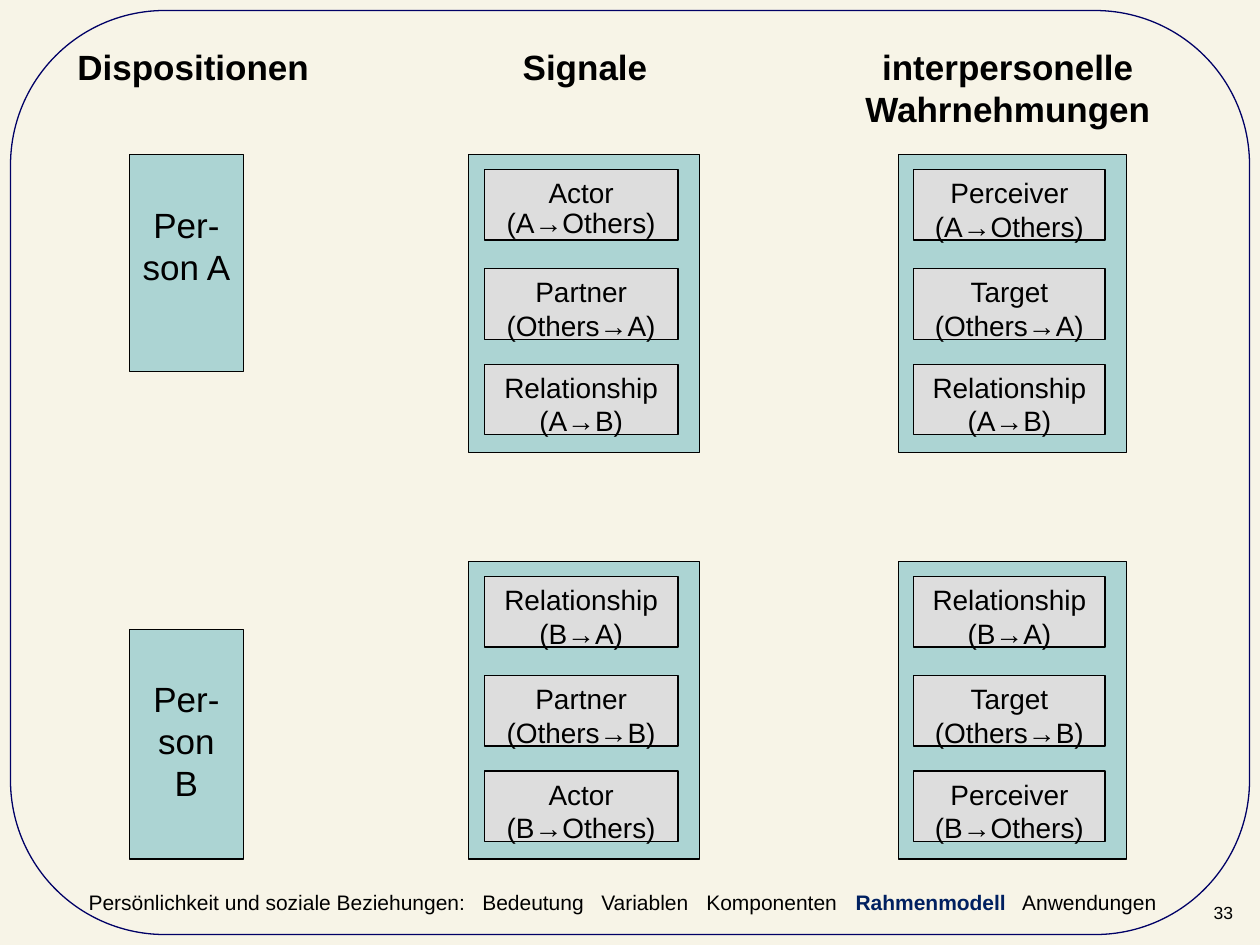
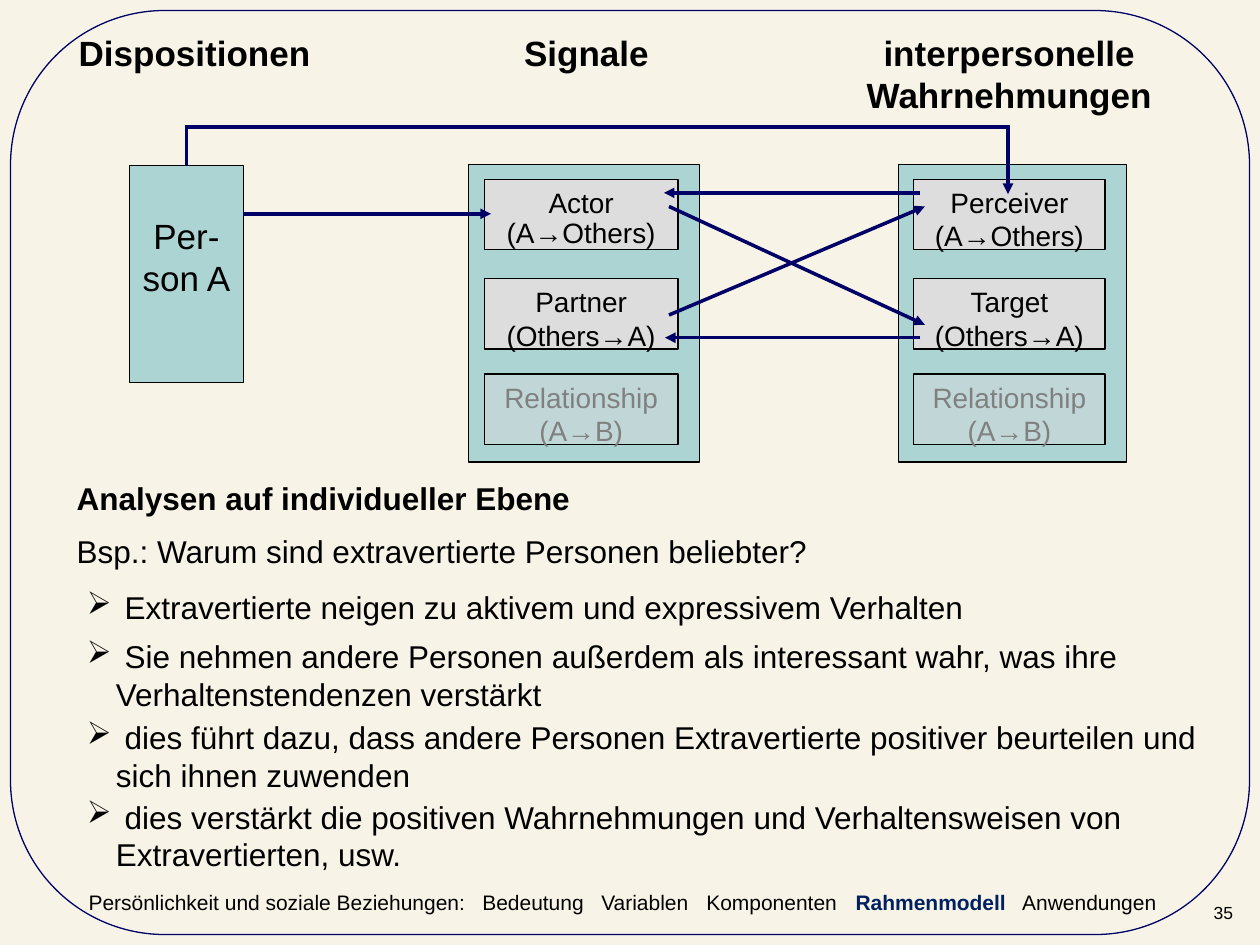
from lxml.etree import SubElement
from pptx import Presentation
from pptx.dml.color import RGBColor
from pptx.enum.shapes import MSO_CONNECTOR as Link, MSO_SHAPE as Preset
from pptx.enum.text import MSO_ANCHOR as Anchor, MSO_AUTO_SIZE as AutoSize, PP_ALIGN as Align
from pptx.oxml.ns import qn
from pptx.util import Pt

# Shared look
FONT = "Arial"
PAPER, TEAL, GREY = "F7F4E7", "ACD4D3", "DDDDDD"
BLACK, NAVY, ACCENT, FADED = "000000", "000066", "002060", "808080"

# Shared grid, in points
PERSON_LEFT, PERSON_WIDTH = 74, 65
SIGNALS = (267.9, 131.8)
PERCEPTIONS = (513.3, 130.4)
PANEL_HEIGHT = 170
ENTRY_INDENT, ENTRY_HEIGHT = 8.8, 40.4
ENTRY_OFFSETS = (8.4, 65.1, 119.7)
HEADINGS = (
    ("Dispositionen", 0, 147.6, 31),
    ("Signale", 221, 153.4, 31),
    ("interpersonelle Wahrnehmungen", 448.6, 181.4, 55.4),
)
FOOTER_TABS = (225, 293, 353, 438.3, 533.5)

# Panel entries: text and special format
SIGNALS_OF_A = [
    ("Actor\n(A→Others)", {"last_spacing": 0.9}),
    ("Partner\n(Others→A)", {}),
]
PERCEPTIONS_OF_A = [
    ("Perceiver (A→Others)", {}),
    ("Target\n(Others→A)", {}),
]
SIGNALS_OF_B = [
    ("Relationship (B→A)", {}),
    ("Partner\n(Others→B)", {}),
    ("Actor\n(B→Others)", {}),
]
PERCEPTIONS_OF_B = [
    ("Relationship (B→A)", {}),
    ("Target\n(Others→B)", {}),
    ("Perceiver (B→Others)", {}),
]
RELATION_A_B = "Relationship (A→B)"

CONCLUSIONS = (
    (332.6, "Extravertierte neigen zu aktivem und expressivem Verhalten"),
    (360.7, "Sie nehmen andere Personen außerdem als interessant wahr, "
            "was ihre Verhaltenstendenzen verstärkt"),
    (406.8, "dies führt dazu, dass andere Personen Extravertierte positiver "
            "beurteilen und sich ihnen zuwenden"),
    (452.2, "dies verstärkt die positiven Wahrnehmungen und Verhaltensweisen "
            "von Extravertierten, usw."),
)


def rgb(color):
    return RGBColor.from_string(color)


# Text
def add_span(para, text, size=18, color=BLACK, bold=False):
    span = para.add_run()
    span.text = text
    span.font.name = FONT
    span.font.size = Pt(size)
    span.font.bold = bold
    span.font.color.rgb = rgb(color)


def write(shape, text, align=Align.LEFT, gap=0, last_spacing=None, **style):
    """Add one paragraph per line of text and return the last one."""
    frame = shape.text_frame
    for line in text.split("\n"):
        if frame.text:
            para = frame.add_paragraph()
            para.space_before = Pt(gap)
        else:
            para = frame.paragraphs[0]
        para.alignment = align
        add_span(para, line, **style)
    if last_spacing:
        para.line_spacing = last_spacing
    return para


def set_insets(frame, side, top, bottom):
    frame.margin_left = frame.margin_right = Pt(side)
    frame.margin_top, frame.margin_bottom = Pt(top), Pt(bottom)


def add_box(page, left, top, width, height, tight=False):
    box = page.shapes.add_textbox(Pt(left), Pt(top), Pt(width), Pt(height))
    box.text_frame.word_wrap = True
    box.text_frame.auto_size = AutoSize.SHAPE_TO_FIT_TEXT
    if tight:
        set_insets(box.text_frame, 0.9, 0.9, 0.9)
    return box


def add_bullet(para, hang):
    props = para._p.get_or_add_pPr()
    props.set("marL", str(Pt(hang)))
    props.set("indent", str(-Pt(hang)))
    SubElement(props, qn("a:buChar"), char="➢")


def add_tabs(para, stops):
    tabs = SubElement(para._p.get_or_add_pPr(), qn("a:tabLst"))
    for stop in stops:
        SubElement(tabs, qn("a:tab"), pos=str(Pt(stop)), algn="l")


# Shapes and lines
def add_block(page, left, top, width, height, fill=None, line=BLACK,
              preset=Preset.RECTANGLE, alpha=None):
    block = page.shapes.add_shape(preset, Pt(left), Pt(top), Pt(width), Pt(height))
    block.shadow.inherit = False
    block.line.color.rgb = rgb(line)
    block.line.width = Pt(0.75)
    if fill:
        block.fill.solid()
        block.fill.fore_color.rgb = rgb(fill)
    else:
        block.fill.background()
    if alpha:
        paint = block._element.spPr.find(qn("a:solidFill"))[0]
        SubElement(paint, qn("a:alpha"), val=str(alpha * 1000))
    block.text_frame.word_wrap = True
    block.text_frame.vertical_anchor = Anchor.TOP
    return block


def add_line(page, start, end, arrow=True):
    line = page.shapes.add_connector(Link.STRAIGHT, *map(Pt, start + end))
    line.line.color.rgb = rgb(NAVY)
    line.line.width = Pt(2)
    if arrow:
        SubElement(line.line._get_or_add_ln(), qn("a:tailEnd"), type="triangle")
    SubElement(line._element.spPr, qn("a:effectLst"))
    return line


# Elements of the model
def add_person(page, name, top, height):
    person = add_block(page, PERSON_LEFT, top, PERSON_WIDTH, height, TEAL)
    set_insets(person.text_frame, 7.2, 27.6, 3.6)
    write(person, name, align=Align.CENTER, size=20)
    return person


def add_panel(page, column, top, entries):
    left, width = column
    add_block(page, left, top, width, PANEL_HEIGHT, TEAL)
    for offset, (text, style) in zip(ENTRY_OFFSETS, entries):
        style = dict(style)
        entry = add_block(page, left + ENTRY_INDENT, top + offset, width - 21,
                          ENTRY_HEIGHT, GREY, alpha=style.pop("alpha", None))
        write(entry, text, align=Align.CENTER, size=16, **style)


def add_headings(page, left, top):
    for text, offset, width, height in HEADINGS:
        box = add_box(page, left + offset, top, width, height)
        write(box, text, align=Align.CENTER, size=20, bold=True)


def add_footer(page):
    box = add_box(page, 49.7, 507.6, 630, 15.8, tight=True)
    para = write(box, "Persönlichkeit und soziale Beziehungen:"
                      "\tBedeutung\tVariablen\tKomponenten\t", size=12)
    add_span(para, "Rahmenmodell", size=12, color=ACCENT, bold=True)
    add_span(para, "\tAnwendungen", size=12)
    add_tabs(para, FOOTER_TABS)


def add_page(deck, number):
    page = deck.slides.add_slide(deck.slide_layouts[6])
    page.background.fill.solid()
    page.background.fill.fore_color.rgb = rgb(PAPER)
    frame = add_block(page, 6, 6, 708, 528, line=NAVY, preset=Preset.ROUNDED_RECTANGLE)
    frame.adjustments[0] = 0.167
    box = add_box(page, 692.6, 514.8, 27.4, 13.7, tight=True)
    box.text_frame.vertical_anchor = Anchor.BOTTOM
    write(box, str(number), size=10)
    add_footer(page)
    return page


# Slides
def build_framework(deck):
    page = add_page(deck, 33)
    relation = [(RELATION_A_B, {})]
    add_person(page, "Per-son A", 88.4, 124)
    add_panel(page, SIGNALS, 88.4, SIGNALS_OF_A + relation)
    add_panel(page, PERCEPTIONS, 88.4, PERCEPTIONS_OF_A + relation)
    add_person(page, "Per-son B", 359.8, 131.2)
    add_panel(page, SIGNALS, 320.9, SIGNALS_OF_B)
    add_panel(page, PERCEPTIONS, 320.9, PERCEPTIONS_OF_B)
    add_headings(page, 36.6, 22.3)


def build_individual_level(deck):
    page = add_page(deck, 35)
    relation = [(RELATION_A_B, {"color": FADED, "alpha": 43})]
    person = add_person(page, "Per-son A", 94.8, 124)
    add_panel(page, SIGNALS, 94, SIGNALS_OF_A + relation)
    add_panel(page, PERCEPTIONS, 94, PERCEPTIONS_OF_A + relation)
    add_headings(page, 37.4, 14.4)

    # Effects between dispositions, signals and perceptions
    for start, end in (
        ((382.3, 118), (528.5, 185.6)),
        ((382.3, 180), (528.5, 118)),
        ((139, 122.2), (280.6, 122.2)),
        ((525.6, 110.2), (379.4, 110.2)),
        ((526, 193), (380, 193)),
    ):
        add_line(page, start, end)

    # Path from the person over the top to the perceiver
    middle, bridge, perceiver = PERSON_LEFT + PERSON_WIDTH / 2, 72.6, 576
    add_line(page, (middle, bridge), (perceiver, bridge), arrow=False)
    riser = add_line(page, (middle, bridge - 1), (middle, 94.8), arrow=False)
    riser.end_connect(person, 0)
    add_line(page, (perceiver, bridge - 1), (perceiver, 110.9))

    # Example
    box = add_box(page, 36.7, 270, 607, 61.2)
    write(box, "Analysen auf individueller Ebene", bold=True)
    write(box, "Bsp.: Warum sind extravertierte Personen beliebter?", gap=9)
    for top, text in CONCLUSIONS:
        box = add_box(page, 42.5, top, 663, 29 if top < 340 else 50.4)
        add_bullet(write(box, " " + text), hang=16.7)


def main():
    deck = Presentation()
    deck.slide_width, deck.slide_height = Pt(720), Pt(540)
    build_framework(deck)
    build_individual_level(deck)
    deck.save("out.pptx")


if __name__ == "__main__":
    main()
